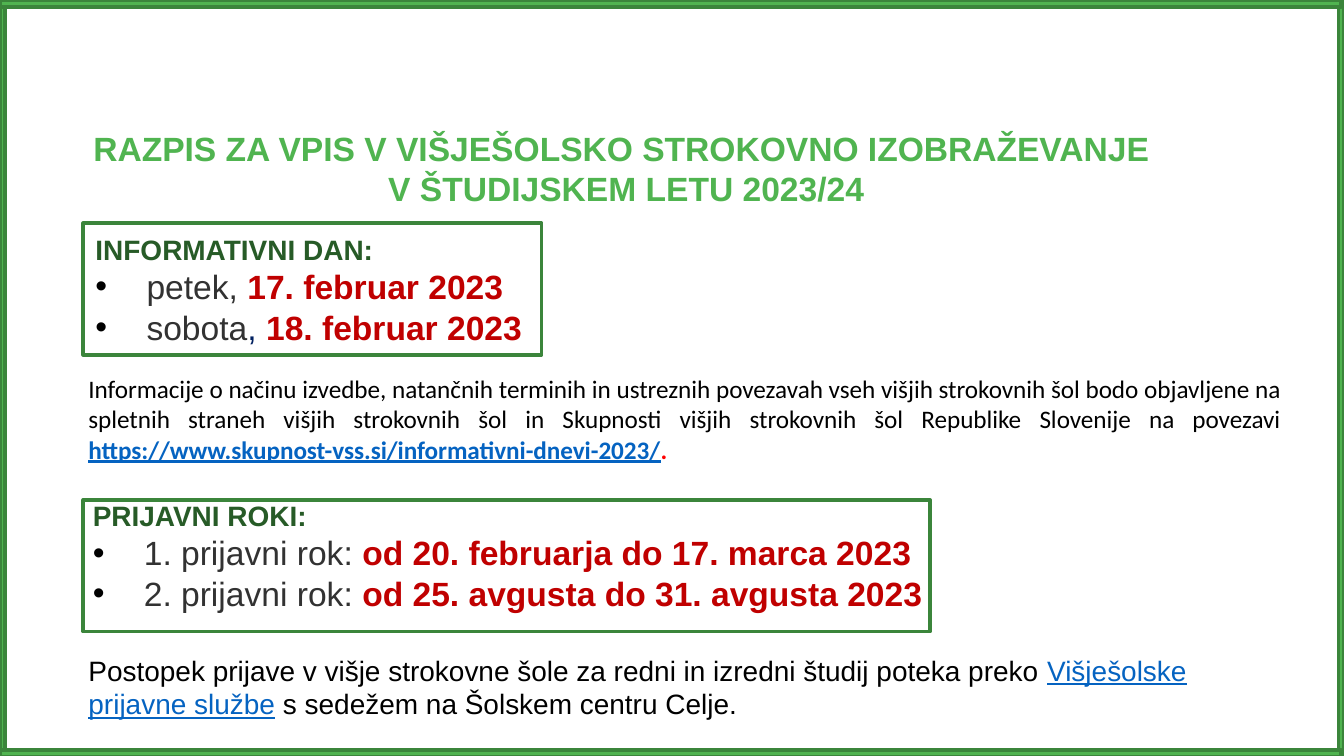
import pptx
import pptx.util
import pptx.dml.color
import pptx.enum.shapes
import pptx.enum.text
import pptx.oxml
import pptx.oxml.ns

Inches = pptx.util.Inches
Pt = pptx.util.Pt
ALIGN = pptx.enum.text.PP_ALIGN

GREEN, EDGE, HEADING = "50B450", "3B853B", "275B27"
GREY, RED, BLACK, LINK = "323232", "C00000", "000000", "0563C1"


def rgb(value):
    """Turn a hex string into a colour."""
    return pptx.dml.color.RGBColor.from_string(value)


def place(s, x, y, w, h):
    """Move and size a shape, in inches."""
    s.left, s.top, s.width, s.height = Inches(x), Inches(y), Inches(w), Inches(h)


def prepare(s, margin_x=0.1, margin_y=0.05):
    """Set the common text frame options and return the frame."""
    tf = s.text_frame
    tf.word_wrap = True
    tf.auto_size = pptx.enum.text.MSO_AUTO_SIZE.NONE
    tf.vertical_anchor = pptx.enum.text.MSO_ANCHOR.TOP
    tf.margin_left = tf.margin_right = Inches(margin_x)
    tf.margin_top = tf.margin_bottom = Inches(margin_y)
    return tf


def next_paragraph(tf, first, align=ALIGN.LEFT):
    """Return the first or a new paragraph without extra spacing."""
    p = tf.paragraphs[0] if first else tf.add_paragraph()
    p.alignment = align
    p.space_before = p.space_after = Pt(0)
    return p


def add_run(p, text, size, color, bold=False, underline=False, font="Arial"):
    """Add one formatted run."""
    r = p.add_run()
    r.text = text
    r.font.name = font
    r.font.size = Pt(size)
    r.font.bold = bold
    r.font.underline = underline
    r.font.color.rgb = rgb(color)


def set_bullet(p, bulleted):
    """Give a paragraph a black hanging bullet, or none."""
    pPr = p._p.get_or_add_pPr()
    pPr.set("marL", str(Inches(0.38) if bulleted else 0))
    pPr.set("indent", str(Inches(-0.38) if bulleted else 0))
    marks = ['<a:buClr {}><a:srgbClr val="000000"/></a:buClr>',
             '<a:buFont {} typeface="Arial"/>',
             '<a:buChar {} char="•"/>'] if bulleted else ["<a:buNone {}/>"]
    for mark in marks:
        pPr.append(pptx.oxml.parse_xml(mark.format(pptx.oxml.ns.nsdecls("a"))))


def fill_title(s, lines):
    """Write the centred title."""
    place(s, 0.49, 0.9, 8.34, 0.71)
    tf = prepare(s)
    for i, line in enumerate(lines):
        add_run(next_paragraph(tf, i == 0, ALIGN.CENTER), line, 18, GREEN, bold=True)


def fill_list(s, box, heading, items):
    """Write a heading and its bulleted dates."""
    place(s, *box)
    tf = prepare(s, 0.07, 0.04)
    p = next_paragraph(tf, True)
    set_bullet(p, False)
    add_run(p, heading, 15, HEADING, bold=True)
    for runs in items:
        p = next_paragraph(tf, False)
        set_bullet(p, True)
        for text, color in runs:
            add_run(p, text, 18, color, bold=color == RED)


def add_note(slide, box, align, runs):
    """Add a text box with one paragraph of runs."""
    s = slide.shapes.add_textbox(*map(Inches, box))
    p = next_paragraph(prepare(s), True, align)
    for text, style in runs:
        add_run(p, text, **style)


def add_rect(slide, box, fill=None):
    """Add a green-edged rectangle, filled or hollow."""
    s = slide.shapes.add_shape(pptx.enum.shapes.MSO_SHAPE.RECTANGLE, *map(Inches, box))
    s.shadow.inherit = False
    s.line.color.rgb = rgb(EDGE)
    s.line.width = Pt(2)
    if fill:
        s.fill.solid()
        s.fill.fore_color.rgb = rgb(fill)
    else:
        s.fill.background()


def main():
    """Build the admissions slide."""
    prs = pptx.Presentation()
    prs.slide_width, prs.slide_height = Inches(10), Inches(10 * 9 / 16)
    slide = prs.slides.add_slide(prs.slide_layouts[3])
    title, info_days, deadlines = list(slide.placeholders)[:3]
    for s in list(slide.placeholders)[3:]:
        s._element.getparent().remove(s._element)

    fill_title(title, ["RAZPIS ZA VPIS V VIŠJEŠOLSKO STROKOVNO IZOBRAŽEVANJE ",
                       "V ŠTUDIJSKEM LETU 2023/24"])
    fill_list(info_days, (0.64, 1.69, 5.22, 1.31), "INFORMATIVNI DAN:", [
        [("petek, ", GREY), ("17. februar 2023", RED)],
        [("sobota", GREY), (", ", "002060"), ("18. februar 2023", RED)]])
    fill_list(deadlines, (0.62, 3.67, 7.12, 1.31), "PRIJAVNI ROKI:", [
        [("1. prijavni rok: ", GREY), ("od 20. februarja do 17. marca 2023", RED)],
        [("2. prijavni rok: ", GREY), ("od 25. avgusta do 31. avgusta 2023", RED)]])

    plain = {"size": 15, "color": BLACK}
    add_note(slide, (0.56, 4.81, 9.07, 0.61), ALIGN.LEFT, [
        ("Postopek prijave v višje strokovne šole za redni in izredni študij "
         "poteka preko ", plain),
        ("Višješolske prijavne službe", {"size": 15, "color": LINK, "underline": True}),
        (" s sedežem na Šolskem centru Celje.", plain)])
    small = {"size": 13.5, "font": "Calibri"}
    add_note(slide, (0.56, 2.73, 9.07, 0.78), ALIGN.JUSTIFY, [
        ("Informacije o načinu izvedbe, natančnih terminih in ustreznih povezavah "
         "vseh višjih strokovnih šol bodo objavljene na spletnih straneh višjih "
         "strokovnih šol in Skupnosti višjih strokovnih šol Republike Slovenije "
         "na povezavi ", {**small, "color": BLACK}),
        ("https://www.skupnost-vss.si/informativni-dnevi-2023/",
         {**small, "color": LINK, "bold": True, "underline": True}),
        (".", {**small, "color": "FF0000", "bold": True})])

    for y, w in ((1.66, 3.41), (3.72, 6.3)):
        add_rect(slide, (0.62, y, w, 0.98))
    for x in (9.96, 0):
        add_rect(slide, (x, 0, 0.04, 5.62), GREEN)
    for y in (0, 5.58):
        add_rect(slide, (0, y, 9.98, 0.05), GREEN)
    prs.save("out.pptx")


if __name__ == "__main__":
    main()
